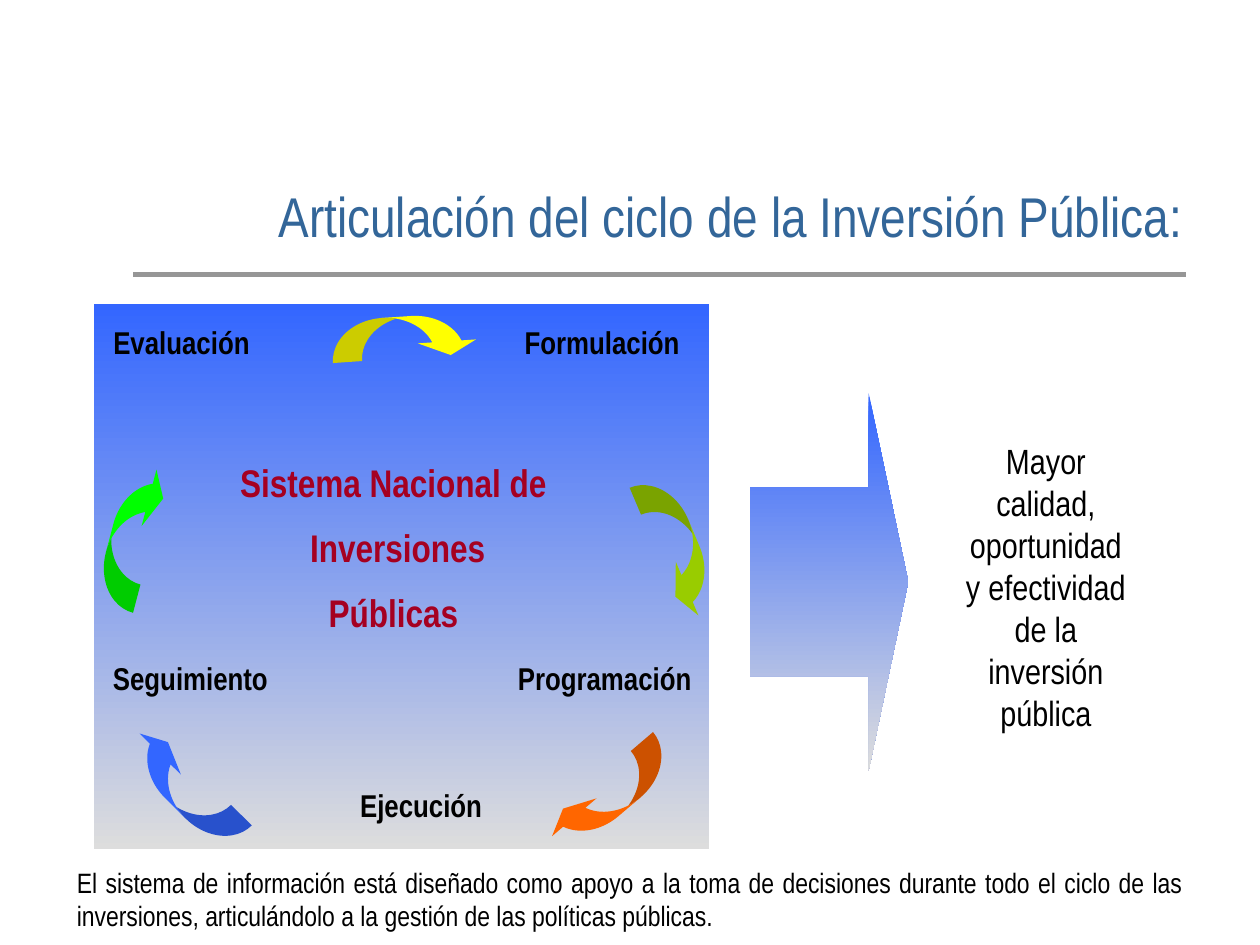
from typing import NamedTuple

from lxml import etree
from pptx import Presentation
from pptx.dml.color import RGBColor
from pptx.enum.shapes import MSO_CONNECTOR, MSO_SHAPE
from pptx.enum.text import MSO_ANCHOR, MSO_AUTO_SIZE, PP_ALIGN
from pptx.oxml.ns import qn
from pptx.util import Cm, Pt

FONT = "Arial Narrow"
BLACK = "000000"
BLUE = "3366FF"
GREY = "DDDDDD"
LEFT_TO_RIGHT_MARGINS = PP_ALIGN.JUSTIFY
CENTER = PP_ALIGN.CENTER
RIGHT = PP_ALIGN.RIGHT
ARROW_W, ARROW_H = 2.97, 0.84


class Stage(NamedTuple):
    name: str
    left: float
    top: float
    width: float


class CycleArrow(NamedTuple):
    left: float
    top: float
    rotation: float
    color: str


STAGES = [
    Stage("Evaluación", 2.01, 6.38, 3.3),
    Stage("Formulación", 9.98, 6.38, 4.32),
    Stage("Seguimiento", 2.01, 13.16, 3.66),
    Stage("Programación", 10.16, 13.16, 4.06),
    Stage("Ejecución", 6.99, 15.72, 3.0),
]
CYCLE_ARROWS = [
    CycleArrow(12.17, 10.62, 67.2, "99CC00"),
    CycleArrow(2.24, 15.47, 224.8, BLUE),
    CycleArrow(1.17, 10.39, 284.8, "00FF00"),
    CycleArrow(6.68, 6.38, 356.1, "FFFF00"),
    CycleArrow(10.82, 15.62, 139.6, "FF6600"),
]


def rgb(color: str) -> RGBColor:
    return RGBColor.from_string(color)


def write(tf, text: str, *, size: float, color: str = BLACK, bold: bool = False,
          align=CENTER, wrap: bool = True) -> None:
    """Fill a text frame, one paragraph per line of text."""
    tf.word_wrap = wrap
    tf.auto_size = MSO_AUTO_SIZE.NONE
    tf.vertical_anchor = MSO_ANCHOR.TOP
    for i, line in enumerate(text.split("\n")):
        p = tf.paragraphs[0] if i == 0 else tf.add_paragraph()
        p.alignment = align
        p.space_before = Pt(size / 2 if i else 0)
        r = p.add_run()
        r.text = line
        r.font.name = FONT
        r.font.size = Pt(size)
        r.font.bold = bold
        r.font.color.rgb = rgb(color)


def add_text(s, text: str, left: float, top: float, width: float, height: float,
             **style) -> None:
    box = s.shapes.add_textbox(Cm(left), Cm(top), Cm(width), Cm(height))
    write(box.text_frame, text, **style)


def add_shape(s, kind, left: float, top: float, width: float, height: float):
    """Add a preset shape without outline or shadow."""
    sp = s.shapes.add_shape(kind, Cm(left), Cm(top), Cm(width), Cm(height))
    sp.shadow.inherit = False
    sp.line.fill.background()
    return sp


def fade_down(sp) -> None:
    """Fill a shape from blue at the top to grey at the bottom."""
    sp.fill.gradient()
    sp.fill.gradient_angle = 270
    for stop, color in zip(sp.fill.gradient_stops, (BLUE, GREY)):
        stop.color.rgb = rgb(color)


def add_cycle_arrow(s, arrow: CycleArrow) -> None:
    sp = add_shape(s, MSO_SHAPE.CURVED_DOWN_ARROW, arrow.left, arrow.top, ARROW_W, ARROW_H)
    for i, value in enumerate((0.7, 1.4, 0.333)):
        sp.adjustments[i] = value
    sp.rotation = arrow.rotation
    sp.fill.solid()
    sp.fill.fore_color.rgb = rgb(arrow.color)


def add_rule(s, left: float, right: float, y: float) -> None:
    line = s.shapes.add_connector(MSO_CONNECTOR.STRAIGHT, Cm(left), Cm(y), Cm(right), Cm(y))
    line.line.color.rgb = rgb("969696")
    line.line.width = Pt(3)
    etree.SubElement(line._element.spPr, qn("a:effectLst"))


def main() -> None:
    prs = Presentation()
    prs.slide_width, prs.slide_height = Cm(25.4), Cm(19.05)
    s = prs.slides.add_slide(prs.slide_layouts.get_by_name("Title Only"))

    title = s.shapes.title
    title.left, title.top, title.width, title.height = Cm(2.9), Cm(3.53), Cm(21.21), Cm(1.63)
    write(title.text_frame, "Articulación del ciclo de la Inversión Pública:",
          size=32, color="336699", align=RIGHT)
    add_rule(s, 2.69, 23.9, 5.54)

    fade_down(add_shape(s, MSO_SHAPE.RECTANGLE, 1.9, 6.12, 12.4, 11))
    for stage in STAGES:
        add_text(s, stage.name, stage.left, stage.top, stage.width, 1.02,
                 size=18, bold=True, wrap=False)
    add_text(s, "Sistema Nacional de\n Inversiones\nPúblicas", 4.55, 9.12, 6.76, 4.01,
             size=22, color="A50021", bold=True, wrap=False)
    for arrow in CYCLE_ARROWS:
        add_cycle_arrow(s, arrow)

    result_arrow = add_shape(s, MSO_SHAPE.RIGHT_ARROW, 15.11, 7.92, 3.2, 7.62)
    result_arrow.adjustments[0] = 0.5
    result_arrow.adjustments[1] = 0.25
    fade_down(result_arrow)
    add_text(s, "Mayor calidad, oportunidad y efectividad de la inversión pública",
             19.08, 8.74, 4.01, 6.17, size=20)
    add_text(s, "El sistema de información está diseñado como apoyo a la toma de decisiones "
             "durante todo el ciclo de las inversiones, articulándolo a la gestión de las "
             "políticas públicas.",
             1.3, 17.32, 22.81, 1.63, size=16, align=LEFT_TO_RIGHT_MARGINS)

    prs.save("out.pptx")


if __name__ == "__main__":
    main()
